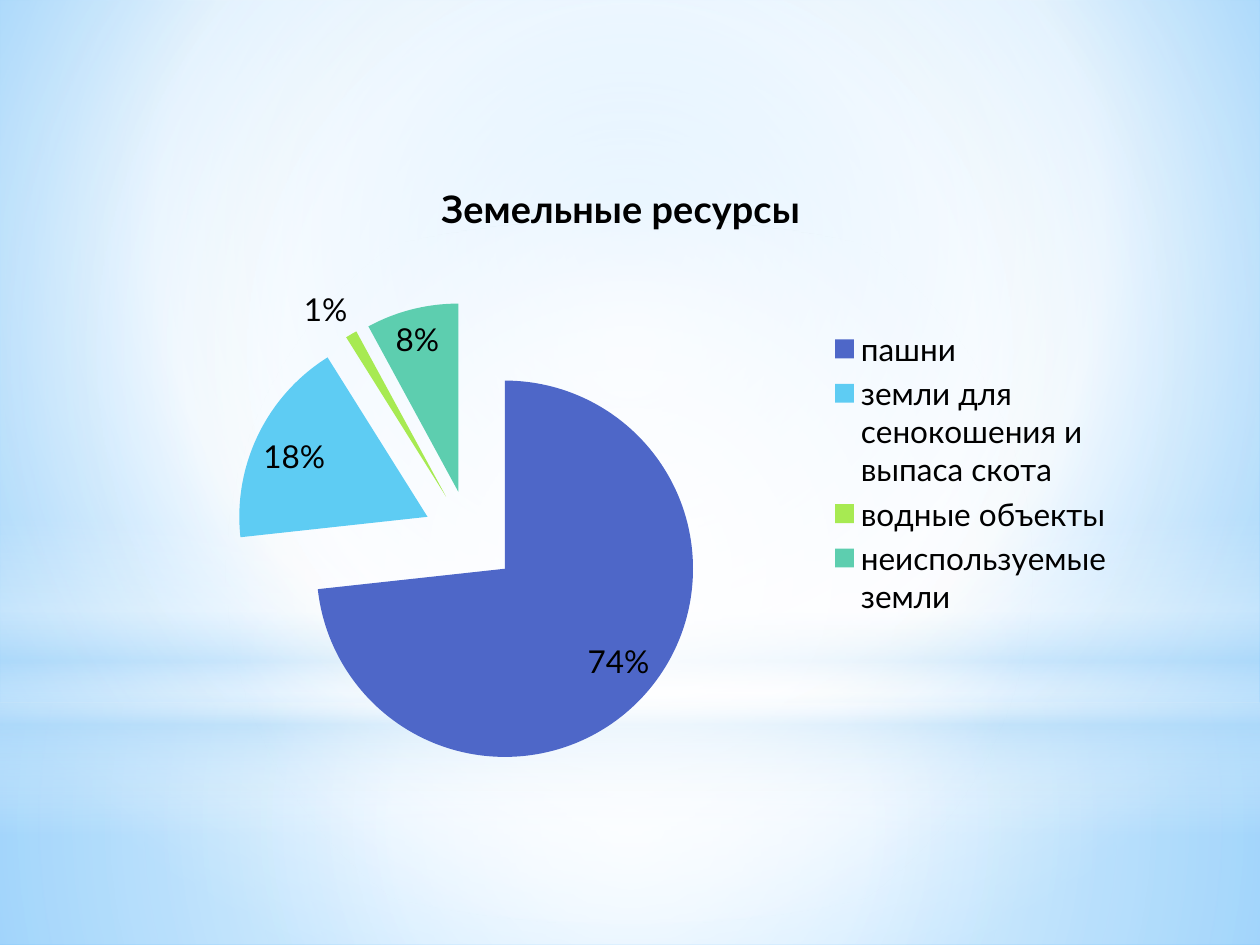
from lxml import etree
from pptx import Presentation
from pptx.chart.data import CategoryChartData
from pptx.dml.color import RGBColor
from pptx.enum.chart import XL_CHART_TYPE, XL_LABEL_POSITION, XL_LEGEND_POSITION
from pptx.enum.shapes import MSO_SHAPE
from pptx.oxml.ns import qn
from pptx.util import Pt

PIE = XL_CHART_TYPE.PIE
BEST_FIT = XL_LABEL_POSITION.BEST_FIT
LEGEND_RIGHT = XL_LEGEND_POSITION.RIGHT
RECTANGLE = MSO_SHAPE.RECTANGLE
OVAL = MSO_SHAPE.OVAL

PX = 914400 / 126
FONT = "Lato"
COLORS = {
    "white": "FFFFFF",
    "pale": "B4DCFA",
    "sky": "9ED5FF",
    "blue": "5BB9FF",
    "text": "000000",
    "arable": "4E67C8",
    "hay": "5ECCF3",
    "water": "A7EA52",
    "unused": "5DCEAF",
}
CENTER = (50, 50, 50, 50)


def px(*lengths):
    return [round(length * PX) for length in lengths]


def paint_gradient(fill, holder, stops, focus=None):
    """Stops are (position %, colour, opacity %); without a focus the gradient runs downwards."""
    fill.gradient()
    gradient = next(holder.iter(qn("a:gradFill")))
    gradient.clear()
    gradient.set("rotWithShape", "1")
    stop_list = etree.SubElement(gradient, qn("a:gsLst"))
    for position, color, opacity in stops:
        stop = etree.SubElement(stop_list, qn("a:gs"), pos=str(position * 1000))
        tint = etree.SubElement(stop, qn("a:srgbClr"), val=COLORS[color])
        if opacity < 100:
            etree.SubElement(tint, qn("a:alpha"), val=str(opacity * 1000))
    if focus:
        circle = etree.SubElement(gradient, qn("a:path"), path="circle")
        sides = {side: str(value * 1000) for side, value in zip("ltrb", focus)}
        etree.SubElement(circle, qn("a:fillToRect"), **sides)
    else:
        etree.SubElement(gradient, qn("a:lin"), ang="5400000", scaled="0")


deck = Presentation()
deck.slide_width, deck.slide_height = px(1260, 945)
page = deck.slides.add_slide(deck.slide_layouts[6])

# Background and its translucent layers
paint_gradient(page.background.fill, page._element,
               [(0, "sky", 100), (60, "white", 100), (100, "blue", 100)],
               (20, 10, 20, 60))

layers = [
    (RECTANGLE, 703, 242, CENTER,
     [(0, "white", 91), (37, "white", 76), (100, "pale", 79)]),
    (RECTANGLE, 0, 703, CENTER,
     [(0, "white", 89), (48, "white", 62), (100, "pale", 79)]),
    (RECTANGLE, 519, 315, None,
     [(0, "white", 0), (29, "white", 30), (45, "pale", 40),
      (55, "white", 26), (65, "pale", 60), (100, "white", 0)]),
    (OVAL, 220, 703, CENTER, [(0, "white", 100), (56, "white", 0)]),
]
for kind, top, height, focus, stops in layers:
    layer = page.shapes.add_shape(kind, *px(0, top, 1260, height))
    layer.shadow.inherit = False
    layer.line.fill.background()
    paint_gradient(layer.fill, layer._element, stops, focus)

# Pie chart of land use
land_use = [
    ("пашни", 74, "arable"),
    ("земли для сенокошения и выпаса скота", 18, "hay"),
    ("водные объекты", 1, "water"),
    ("неиспользуемые земли", 8, "unused"),
]
data = CategoryChartData()
data.categories = [name for name, share, color in land_use]
data.add_series("Series 1", [share for name, share, color in land_use])
chart = page.shapes.add_chart(PIE, *px(115, 155, 1012, 635), data).chart
chart.font.name = FONT
chart.font.size = Pt(18)
chart.font.color.rgb = RGBColor.from_string(COLORS["text"])

chart.has_title = True
title = chart.chart_title.text_frame
title.text = "Земельные ресурсы"
title_font = title.paragraphs[0].runs[0].font
title_font.name = FONT
title_font.size = Pt(21.6)
title_font.bold = True
title_font.color.rgb = RGBColor.from_string(COLORS["text"])

chart.has_legend = True
chart.legend.position = LEGEND_RIGHT
chart.legend.include_in_layout = False

plot = chart.plots[0]
plot.vary_by_categories = True
series = plot.series[0]
for index, (name, share, color) in enumerate(land_use):
    wedge = series.points[index].format.fill
    wedge.solid()
    wedge.fore_color.rgb = RGBColor.from_string(COLORS[color])
explosion = etree.Element(qn("c:explosion"), val="25")
series._element.find(qn("c:dPt")).addprevious(explosion)

# The rounded shares add up to 101, so they are labelled as values
plot.has_data_labels = True
labels = plot.data_labels
labels.show_value = True
labels.show_percentage = False
labels.number_format = '0"%"'
labels.number_format_is_linked = False
labels.position = BEST_FIT

deck.save("out.pptx")
